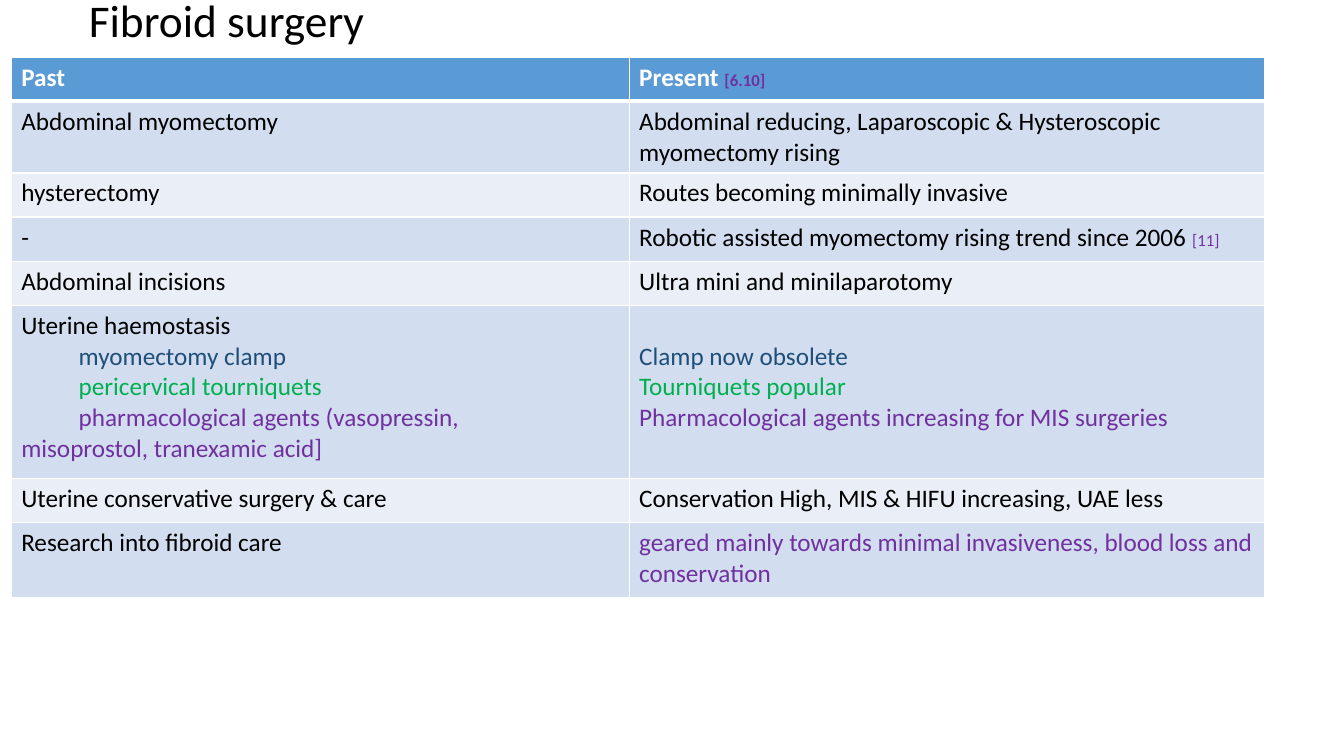
from lxml import etree
from pptx import Presentation
from pptx.dml.color import RGBColor
from pptx.enum.text import MSO_ANCHOR, MSO_AUTO_SIZE, PP_ALIGN
from pptx.oxml.ns import qn
from pptx.util import Pt

LEFT = PP_ALIGN.LEFT
MIDDLE = MSO_ANCHOR.MIDDLE
NO_FIT = MSO_AUTO_SIZE.NONE
TITLE_ONLY = 5

COLORS = {
    "black": "000000", "white": "FFFFFF", "header": "5B9BD5",
    "band": "D2DEEF", "light": "EAEFF7", "purple": "7030A0",
    "blue": "1F4E79", "green": "00B050",
}
LINE_HEIGHT = 22
INDENT = 41
COLUMN_WIDTHS = [441.4, 453.6]
ROW_HEIGHTS = [31.4, 50.6, 31.5, 31.5, 31.5, 123.8, 31.5, 53.8]
ROWS = [
    ("Past", [[("Present ", {}), ("[6.10]", {"size": 12, "color": "purple"})]]),
    ("Abdominal myomectomy",
     "Abdominal reducing, Laparoscopic & Hysteroscopic myomectomy rising"),
    ("hysterectomy", "Routes becoming minimally invasive"),
    ("-", [[("Robotic assisted myomectomy rising trend since 2006 ", {}),
            ("[11]", {"size": 12, "color": "purple"})]]),
    ("Abdominal incisions", "Ultra mini and minilaparotomy"),
    ([[("Uterine haemostasis", {})],
      [("myomectomy clamp", {"color": "blue"})],
      [("pericervical tourniquets", {"color": "green"})],
      [("pharmacological agents (vasopressin,\nmisoprostol, tranexamic acid]",
        {"color": "purple"})]],
     [[("Clamp now obsolete", {"color": "blue"})],
      [("Tourniquets popular", {"color": "green"})],
      [("Pharmacological agents increasing for MIS surgeries",
        {"color": "purple"})]]),
    ("Uterine conservative surgery & care",
     "Conservation High, MIS & HIFU increasing, UAE less"),
    ("Research into fibroid care",
     [[("geared mainly towards minimal invasiveness, blood loss and conservation",
        {"color": "purple"})]]),
]
HAEMOSTASIS_ROW = 5


def set_all(target, values):
    for name, value in values.items():
        setattr(target, name, value)


class SlideBuilder:
    """Hold the text style and the current slide, and add its elements."""

    def __init__(self, slide, font="Calibri", size=18):
        self.slide = slide
        self.font = font
        self.size = size

    def add_text(self, para, text, size=None, color="black", bold=False):
        for number, line in enumerate(text.split("\n")):
            if number:
                para.add_line_break()
            span = para.add_run()
            span.text = line
            set_all(span.font, {"name": self.font, "size": Pt(size or self.size),
                                "bold": bold})
            span.font.color.rgb = RGBColor.from_string(COLORS[color])

    def title(self, text, left, top, width, height, size):
        box = self.slide.shapes.title
        set_all(box, {"left": Pt(left), "top": Pt(top),
                      "width": Pt(width), "height": Pt(height)})
        set_all(box.text_frame, {"word_wrap": True, "auto_size": NO_FIT,
                                 "vertical_anchor": MIDDLE})
        para = box.text_frame.paragraphs[0]
        set_all(para, {"alignment": LEFT, "line_spacing": 0.9})
        self.add_text(para, text, size)

    def borders(self, cell, header):
        properties = cell._tc.get_or_add_tcPr()
        for position, side in enumerate(("lnL", "lnR", "lnT", "lnB")):
            weight = 3 if header and side == "lnB" else 1
            line = etree.Element(qn(f"a:{side}"), w=str(Pt(weight)))
            fill = etree.SubElement(line, qn("a:solidFill"))
            etree.SubElement(fill, qn("a:srgbClr"), val=COLORS["white"])
            properties.insert(position, line)

    def cell(self, cell, content, fill, header):
        cell.fill.solid()
        cell.fill.fore_color.rgb = RGBColor.from_string(COLORS[fill])
        self.borders(cell, header)
        base = {"color": "white", "bold": True} if header else {}
        paragraphs = [[(content, {})]] if isinstance(content, str) else content
        frame = cell.text_frame
        for number, spans in enumerate(paragraphs):
            para = frame.add_paragraph() if number else frame.paragraphs[0]
            for text, style in spans:
                self.add_text(para, text, **{**base, **style})

    def table(self, rows, left, top, widths, heights):
        frame = self.slide.shapes.add_table(
            len(rows), len(widths), Pt(left), Pt(top),
            Pt(sum(widths)), Pt(sum(heights)))
        table = frame.table
        for column, width in zip(table.columns, widths):
            column.width = Pt(width)
        for index, contents in enumerate(rows):
            table.rows[index].height = Pt(heights[index])
            fill = "header" if index == 0 else "band" if index % 2 else "light"
            for column, content in enumerate(contents):
                self.cell(table.cell(index, column), content, fill, index == 0)
        return table

    def indent(self, paragraphs, distance):
        for para in paragraphs:
            para._p.get_or_add_pPr().set("indent", str(Pt(distance)))


def main():
    deck = Presentation()
    set_all(deck, {"slide_width": Pt(960), "slide_height": Pt(540)})
    page = deck.slides.add_slide(deck.slide_layouts[TITLE_ONLY])
    builder = SlideBuilder(page)
    builder.title("Fibroid surgery", 56.2, 0, 818.6, 32.4, 32.4)
    table = builder.table(ROWS, 8, 41, COLUMN_WIDTHS, ROW_HEIGHTS)
    methods = table.cell(HAEMOSTASIS_ROW, 0)
    builder.indent(methods.text_frame.paragraphs[1:], INDENT)
    trends = table.cell(HAEMOSTASIS_ROW, 1)
    trends.margin_top = Pt(3.6 + LINE_HEIGHT)
    deck.save("out.pptx")


if __name__ == "__main__":
    main()
